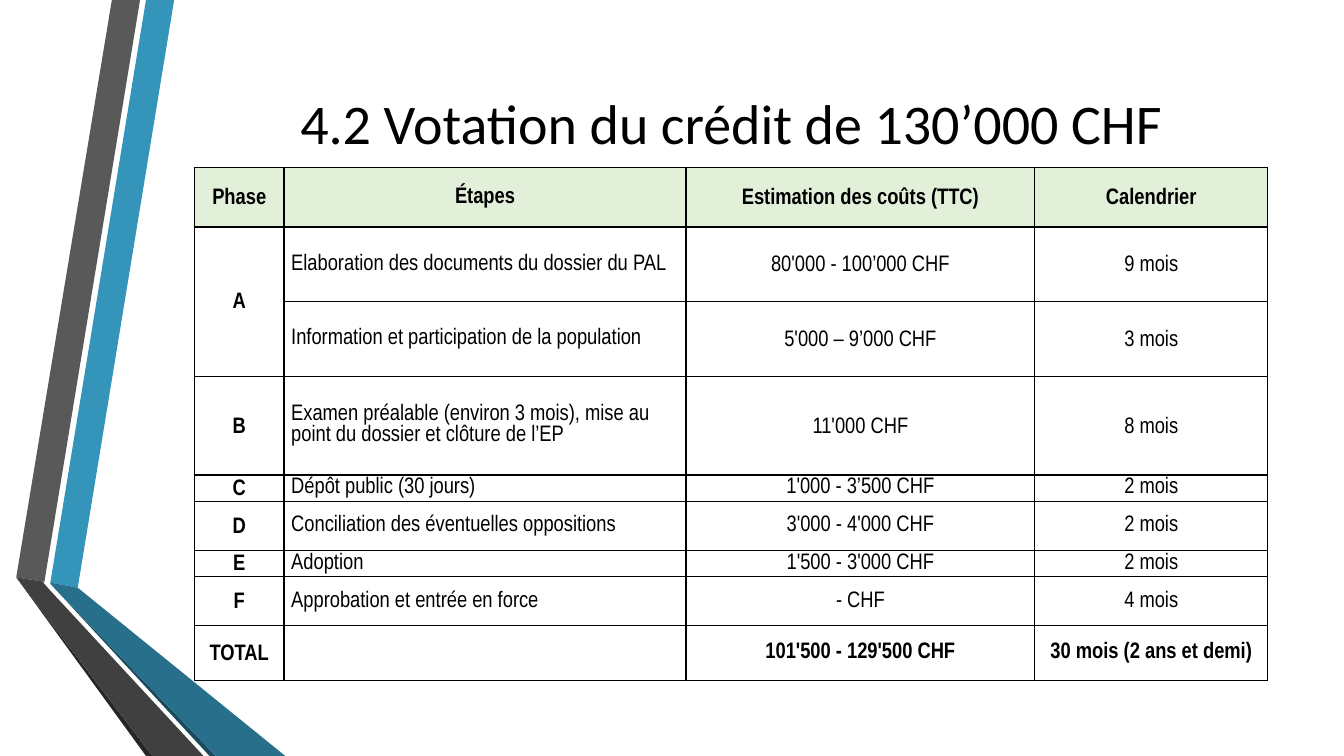
from lxml.etree import SubElement
from pptx import Presentation
from pptx.dml.color import RGBColor
from pptx.enum.text import MSO_ANCHOR, PP_ALIGN
from pptx.oxml.ns import qn
from pptx.util import Cm, Pt

# Ribbon outlines in centimetres
BANDS = [
    ("3494BA", [(1.27, 14.68), (1.96, 14.81), (4.39, 0), (3.68, 0)]),
    ("595959", [(3.53, 0), (2.82, 0), (0.41, 14.55), (1.12, 14.66)]),
    ("262626", [(0.41, 14.55), (3.68, 19.05), (3.84, 19.05)]),
    ("1A4A5D", [(1.27, 14.71), (5.28, 19.05), (5.44, 19.05)]),
    ("276F8B", [(1.27, 14.68), (1.27, 14.71), (5.44, 19.05),
                (7.19, 19.05), (1.96, 14.81)]),
    ("404040", [(0.41, 14.55), (3.84, 19.05), (5.13, 19.05),
                (1.22, 14.83), (1.09, 14.68), (1.12, 14.66)]),
]

# Table content and sizes
COLS = [2.26, 10.13, 8.79, 5.87]
ROWS = [1.5, 1.88, 1.88, 2.49, 0.66, 1.24, 0.66, 1.24, 1.37]
PLAN = [
    ["Phase", "Étapes", "Estimation des coûts (TTC)", "Calendrier"],
    ["A", "Elaboration des documents du dossier du PAL",
     "80'000 - 100’000 CHF", "9 mois"],
    ["", "Information et participation de la population",
     "5'000 – 9’000 CHF", "3 mois"],
    ["B", "Examen préalable (environ 3 mois), mise au point du dossier "
     "et clôture de l’EP", "11'000 CHF", "8 mois"],
    ["C", "Dépôt public (30 jours)", "1'000 - 3’500 CHF", "2 mois"],
    ["D", "Conciliation des éventuelles oppositions",
     "3'000 - 4'000 CHF", "2 mois"],
    ["E", "Adoption", "1'500 - 3'000 CHF", "2 mois"],
    ["F", "Approbation et entrée en force", "- CHF", "4 mois"],
    ["TOTAL", "", "101'500 - 129'500 CHF", "30 mois (2 ans et demi)"],
]
CELL = {"margin_left": Cm(0.18), "margin_right": Cm(0.18),
        "margin_top": 0, "margin_bottom": 0,
        "vertical_anchor": MSO_ANCHOR.MIDDLE}


def apply(item, form):
    for key, value in form.items():
        setattr(item, key, value)


def color(code):
    return RGBColor.from_string(code)


def paint(item, code):
    item.fill.solid()
    item.fill.fore_color.rgb = color(code)


def write(para, text, font, **form):
    run = para.add_run()
    run.text = text
    apply(run.font, font)
    run.font.color.rgb = color("000000")
    apply(para, form)


def band(slide, code, spots):
    spots = [(Cm(x), Cm(y)) for x, y in spots]
    pen = slide.shapes.build_freeform(*spots[0], scale=1.0)
    pen.add_line_segments(spots[1:], close=True)
    shape = pen.convert_to_shape()
    shape.shadow.inherit = False
    shape.line.fill.background()
    paint(shape, code)


def title(slide, text):
    shape = slide.shapes.title
    apply(shape, {"left": Cm(4.9), "top": Cm(0.64),
                  "width": Cm(27.05), "height": Cm(4.88)})
    paint(shape, "FFFFFF")
    frame = shape.text_frame
    apply(frame, {"vertical_anchor": MSO_ANCHOR.MIDDLE, "word_wrap": True})
    write(frame.paragraphs[0], text, {"name": "Calibri", "size": Pt(40)},
          alignment=PP_ALIGN.CENTER)


def border(cell):
    props = cell._tc.get_or_add_tcPr()
    for side in ("lnL", "lnR", "lnT", "lnB"):
        line = SubElement(props, qn("a:" + side), w=str(Pt(1)))
        fill = SubElement(line, qn("a:solidFill"))
        SubElement(fill, qn("a:srgbClr"), val="000000")


def entry(cell, text, row, col):
    apply(cell, CELL)
    border(cell)
    if row == 0:
        paint(cell, "E2EFD9")
    else:
        cell.fill.background()
    if not text:
        return
    bold = row in (0, len(PLAN) - 1) or col == 0
    left = col == 1 and row > 0
    loose = col == 0 or (col > 1 and row < 4)
    write(cell.text_frame.paragraphs[0], text,
          {"name": "Arial Narrow", "size": Pt(16), "bold": bold},
          alignment=PP_ALIGN.LEFT if left else PP_ALIGN.CENTER,
          line_spacing=1.15 if loose else 1.0)


def grid(slide):
    table = slide.shapes.add_table(
        len(ROWS), len(COLS), Cm(4.9), Cm(4.22),
        Cm(sum(COLS)), Cm(sum(ROWS))).table
    apply(table, {"first_row": False, "horz_banding": False})
    for item, width in zip(table.columns, COLS):
        item.width = Cm(width)
    for item, height in zip(table.rows, ROWS):
        item.height = Cm(height)
    for row, texts in enumerate(PLAN):
        for col, text in enumerate(texts):
            entry(table.cell(row, col), text, row, col)
    # Phase A covers two steps
    table.cell(1, 0).merge(table.cell(2, 0))


def main():
    deck = Presentation()
    apply(deck, {"slide_width": Cm(33.87), "slide_height": Cm(19.05)})
    slide = deck.slides.add_slide(deck.slide_layouts[5])
    # Ribbons at the left
    for code, spots in BANDS:
        band(slide, code, spots)
    # Heading and cost plan
    title(slide, "4.2 Votation du crédit de 130’000 CHF")
    grid(slide)
    deck.save("out.pptx")


if __name__ == "__main__":
    main()
